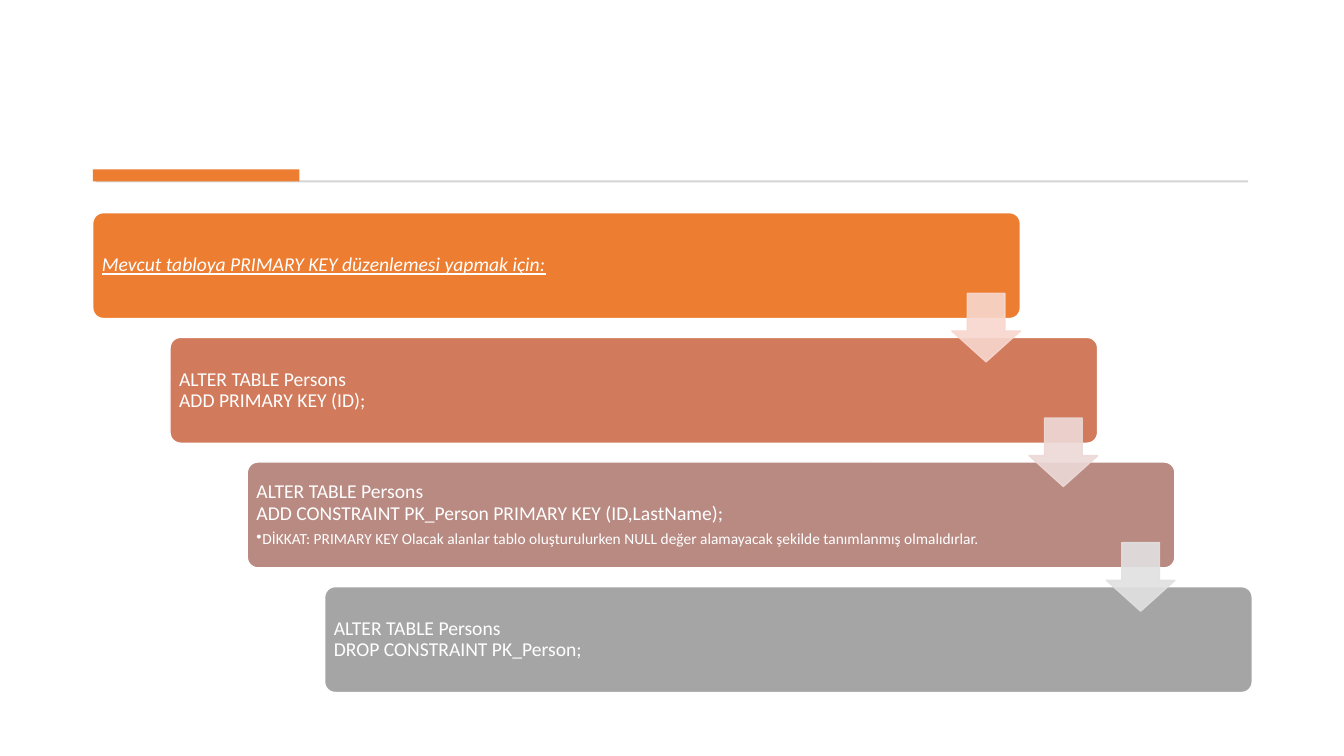
from lxml.etree import SubElement
from pptx import Presentation
from pptx.dml.color import RGBColor
from pptx.enum.shapes import MSO_SHAPE
from pptx.enum.text import MSO_ANCHOR, PP_ALIGN
from pptx.oxml.ns import qn
from pptx.util import Inches, Pt

STEPS = [
    ("ED7D31", "F8D7CE", ["Mevcut tabloya PRIMARY KEY düzenlemesi yapmak için:"], None),
    ("D17B5C", "EDD9D7", ["ALTER TABLE Persons", "ADD PRIMARY KEY (ID);"], None),
    ("B98A82", "E1E1E1",
     ["ALTER TABLE Persons", "ADD CONSTRAINT PK_Person PRIMARY KEY (ID,LastName);"],
     "DİKKAT: PRIMARY KEY Olacak alanlar tablo oluşturulurken NULL değer "
     "alamayacak şekilde tanımlanmış olmalıdırlar."),
    ("A5A5A5", None, ["ALTER TABLE Persons", "DROP CONSTRAINT PK_Person;"], None),
]


def color(code):
    return RGBColor.from_string(code)


def add_form(slide, kind, box, fill, edge=None):
    form = slide.shapes.add_shape(kind, *[Inches(n) for n in box])
    form.shadow.inherit = False
    form.fill.solid()
    form.fill.fore_color.rgb = color(fill)
    if edge:
        form.line.color.rgb = color(edge)
        form.line.width = Pt(1)
    else:
        form.line.fill.background()
    return form


def add_run(para, text, size, title=False):
    run = para.add_run()
    run.text = text
    font = run.font
    font.name = "Calibri"
    font.size = Pt(size)
    font.color.rgb = color("FFFFFF")
    if title:
        font.italic = True
        font.underline = True


def set_para(para):
    para.alignment = PP_ALIGN.LEFT
    para.line_spacing = 0.9


def add_note(frame, text):
    para = frame.add_paragraph()
    set_para(para)
    para.level = 1
    props = para._p.get_or_add_pPr()
    props.set("marL", str(Inches(0.06)))
    props.set("indent", str(-Inches(0.06)))
    SubElement(props, qn("a:buChar"), char="•")
    add_run(para, text, 11)


def add_card(slide, box, fill, lines, note, title):
    card = add_form(slide, MSO_SHAPE.ROUNDED_RECTANGLE, box, fill, "FFFFFF")
    card.adjustments[0] = 0.1
    frame = card.text_frame
    frame.word_wrap = True
    frame.vertical_anchor = MSO_ANCHOR.MIDDLE
    frame.margin_left = frame.margin_right = Inches(0.06)
    frame.margin_top = frame.margin_bottom = Inches(0.06)
    para = frame.paragraphs[0]
    set_para(para)
    for row, line in enumerate(lines):
        if row:
            para.add_line_break()
        add_run(para, line, 14, title)
    if note:
        para.space_after = Pt(5)
        add_note(frame, note)


def add_arrow(slide, box, fill):
    arrow = add_form(slide, MSO_SHAPE.DOWN_ARROW, box, fill, fill)
    arrow.adjustments[0] = 0.55
    arrow.adjustments[1] = 0.45
    for tint in arrow._element.spPr.iter(qn("a:srgbClr")):
        SubElement(tint, qn("a:alpha"), val="90000")


def add_rule(slide, box):
    left, top, width, height = box
    add_form(slide, MSO_SHAPE.RECTANGLE, (left + 0.03, top + 0.11, width - 0.03, 0.02), "D5D5D5")
    add_form(slide, MSO_SHAPE.RECTANGLE, (left, top, 2.05, height), "ED7D31")


def add_stairs(slide, box):
    left, top, width, height = box
    wide, tall, side = 9.2, 1.05, 0.68
    last = len(STEPS) - 1
    across, down = (width - wide) / last, (height - tall) / last
    spots = [(left + n * across, top + n * down) for n in range(len(STEPS))]
    for n, ((x, y), (fill, tint, lines, note)) in enumerate(zip(spots, STEPS)):
        add_card(slide, (x, y, wide, tall), fill, lines, note, n == 0)
    for (x, y), (fill, tint, lines, note) in zip(spots, STEPS):
        if tint:
            add_arrow(slide, (x + wide - side, y + 0.8, side, side), tint)


def main():
    deck = Presentation()
    deck.slide_width = Inches(13.33)
    deck.slide_height = Inches(7.5)
    slide = deck.slides.add_slide(deck.slide_layouts[6])
    add_rule(slide, (0.92, 1.68, 11.46, 0.12))
    add_stairs(slide, (0.92, 2.11, 11.5, 4.76))
    deck.save("out.pptx")


if __name__ == "__main__":
    main()
